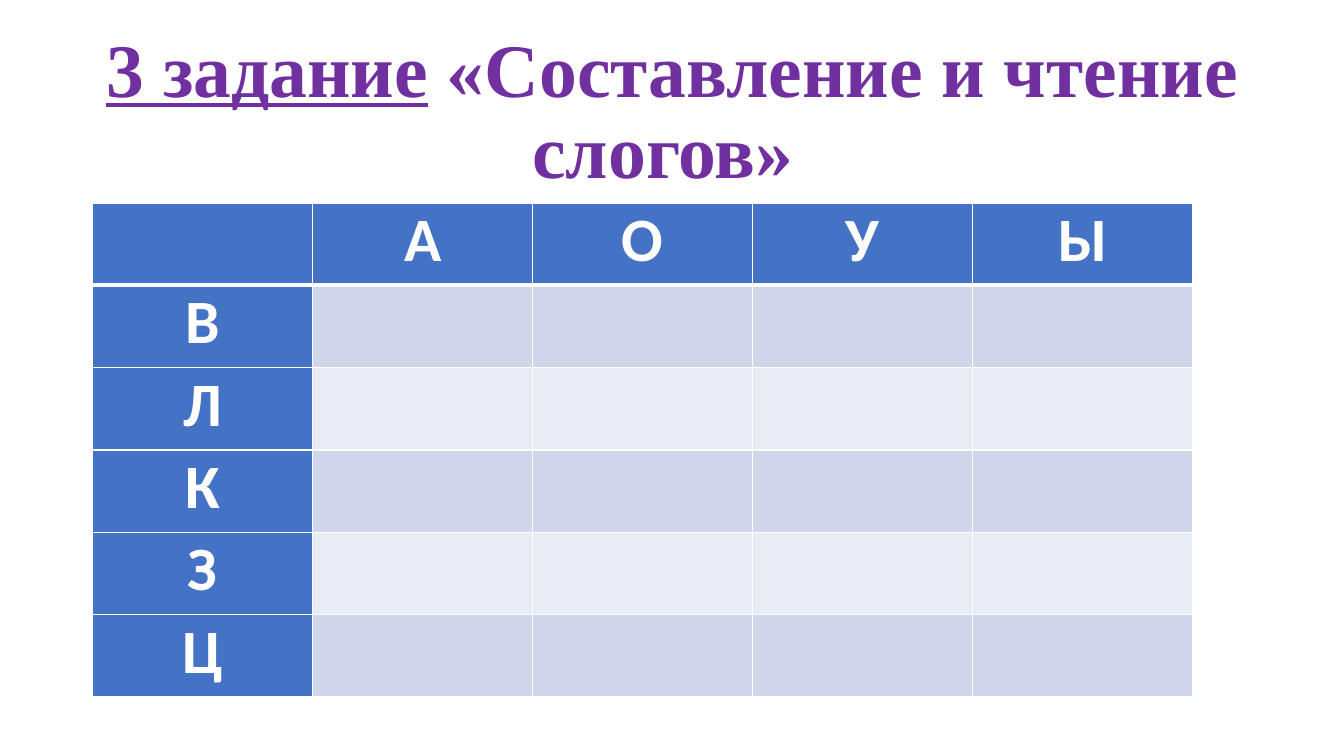
from lxml import etree
from pptx import Presentation
from pptx.dml.color import RGBColor
from pptx.enum import text
from pptx.oxml import ns
from pptx.util import Pt

PURPLE = RGBColor(0x70, 0x30, 0xA0)
WHITE = RGBColor(0xFF, 0xFF, 0xFF)
HEADER = RGBColor(0x44, 0x72, 0xC4)
BANDS = (RGBColor(0xE9, 0xEB, 0xF5), RGBColor(0xCF, 0xD5, 0xEA))
VOWELS = "АОУЫ"
CONSONANTS = "ВЛКЗЦ"
COL_WIDTH, ROW_HEIGHT = 157.15, 58.8


def add_run(p, content, size, font, color, underline=False):
    """Add a bold, formatted run to a centred paragraph."""
    p.alignment = text.PP_ALIGN.CENTER
    r = p.add_run()
    r.text = content
    r.font.size = Pt(size)
    r.font.name = font
    r.font.bold = True
    r.font.underline = underline
    r.font.color.rgb = color


def add_title(slide, task, name):
    """Add the two-part title with the task number underlined."""
    sp = slide.shapes.add_textbox(Pt(66.24), Pt(28.75), Pt(828), Pt(104.4))
    tf = sp.text_frame
    tf.word_wrap = True
    tf.vertical_anchor = text.MSO_ANCHOR.MIDDLE
    p = tf.paragraphs[0]
    p.line_spacing = 0.9
    add_run(p, task, 54, "Times New Roman", PURPLE, underline=True)
    add_run(p, name, 54, "Times New Roman", PURPLE)


def set_borders(cell, **widths):
    """Draw white cell borders with the given widths in points."""
    tc_pr = cell._tc.get_or_add_tcPr()
    for i, (side, width) in enumerate(widths.items()):
        ln = etree.Element(ns.qn(f"a:ln{side}"), w=str(Pt(width)))
        fill = etree.SubElement(ln, ns.qn("a:solidFill"))
        etree.SubElement(fill, ns.qn("a:srgbClr"), val=str(WHITE))
        tc_pr.insert(i, ln)


def format_cell(cell, label, fill, top, bottom):
    """Fill and outline a cell and write its letter, if any."""
    cell.fill.solid()
    cell.fill.fore_color.rgb = fill
    cell.margin_left = cell.margin_right = Pt(5)
    cell.margin_top = cell.margin_bottom = 0
    if label:
        add_run(cell.text_frame.paragraphs[0], label, 44, "Calibri", WHITE)
    set_borders(cell, L=1, R=1, T=top, B=bottom)


def add_syllable_table(slide):
    """Add the grid of consonant rows and vowel columns."""
    rows, cols = len(CONSONANTS) + 1, len(VOWELS) + 1
    table = slide.shapes.add_table(
        rows, cols, Pt(66.24), Pt(145),
        Pt(COL_WIDTH * cols), Pt(ROW_HEIGHT * rows)).table
    for column in table.columns:
        column.width = Pt(COL_WIDTH)
    for i, row in enumerate(table.rows):
        row.height = Pt(ROW_HEIGHT)
        for j, cell in enumerate(row.cells):
            label = ""
            if i == 0 and j > 0:
                label = VOWELS[j - 1]
            elif i > 0 and j == 0:
                label = CONSONANTS[i - 1]
            fill = HEADER if i == 0 or j == 0 else BANDS[i % 2]
            format_cell(cell, label, fill,
                        top=3 if i == 1 else 1, bottom=3 if i == 0 else 1)


def main():
    """Build the syllable reading slide."""
    prs = Presentation()
    prs.slide_width, prs.slide_height = Pt(960), Pt(540)
    slide = prs.slides.add_slide(prs.slide_layouts[6])
    add_title(slide, "3 задание", " «Составление и чтение слогов» ")
    add_syllable_table(slide)
    prs.save("out.pptx")


if __name__ == "__main__":
    main()
